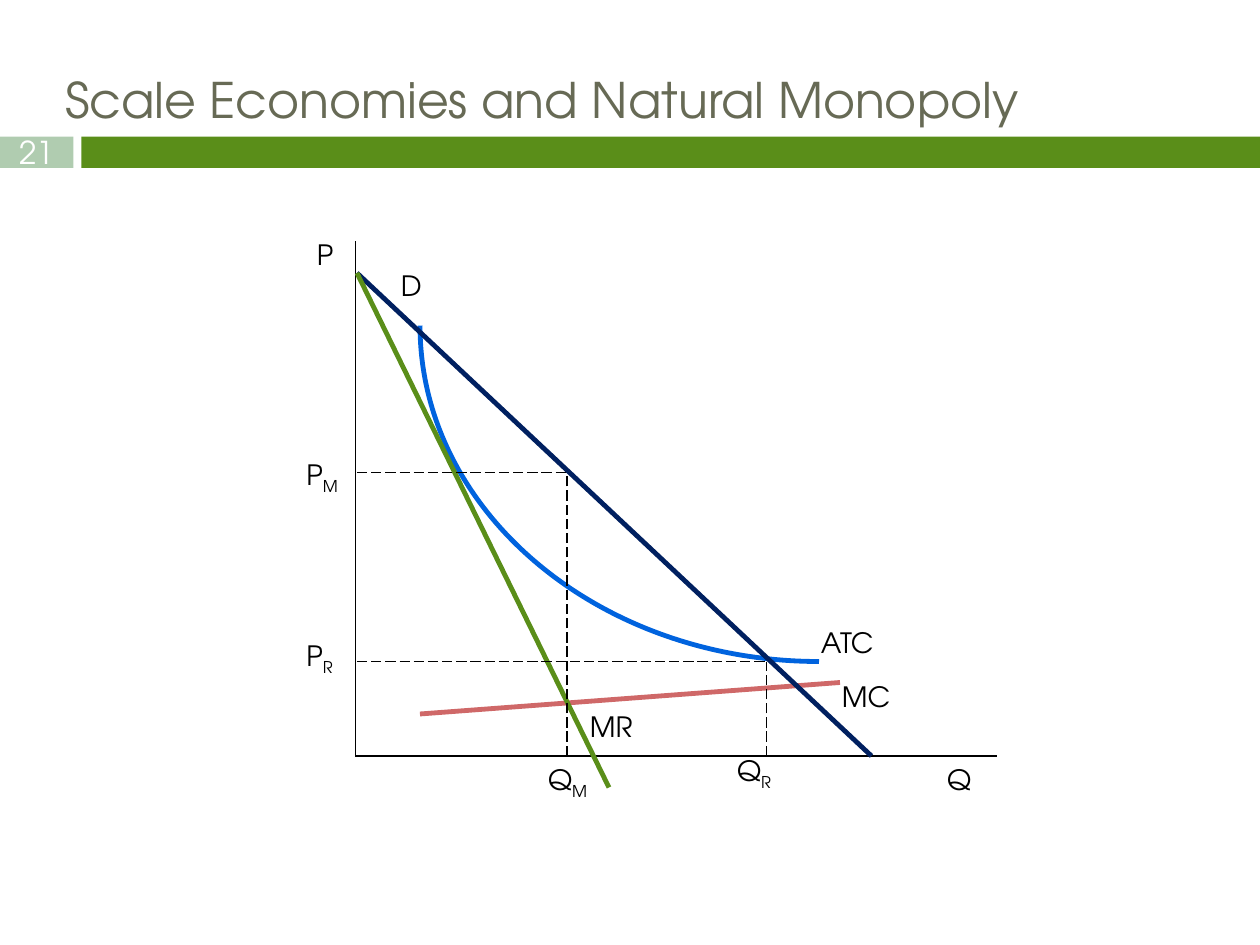
from lxml.etree import SubElement
from pptx import Presentation
from pptx.dml.color import RGBColor
from pptx.enum.dml import MSO_LINE_DASH_STYLE as DASH
from pptx.enum.shapes import MSO_CONNECTOR, MSO_SHAPE
from pptx.enum.text import MSO_ANCHOR, MSO_AUTO_SIZE, PP_ALIGN
from pptx.oxml.ns import qn
from pptx.util import Pt

FONT = "TeX Gyre Adventor"
COLORS = {
    "title": "676A55", "bar": "5A8E19", "number": "B0CCB0", "white": "FFFFFF",
    "black": "000000", "demand": "002060", "mr": "5A8E19", "mc": "CF6868",
    "atc": "0063DE",
}
THIN, THICK = 0.75, 2.75

# Positions of the diagram, in points
AXIS_X, AXIS_Y = 203, 432
LEFT = 204
INTERCEPT = (LEFT, 156)
MONOPOLY = (324, 270)
REGULATED = (438, 378)

# Letter, subscript, left, top
LABELS = [
    ("P", "", 174, 132), ("MC", "", 474, 385), ("ATC", "", 462, 354),
    ("D", "", 222, 150), ("MR", "", 330, 402), ("P", "M", 168, 258),
    ("P", "R", 168, 361.5), ("Q", "R", 414, 427), ("Q", "M", 306, 432),
    ("Q", "", 534, 432),
]


def rgb(name):
    return RGBColor.from_string(COLORS[name])


def add_run(p, text, size, color):
    r = p.add_run()
    r.text = text
    r.font.name = FONT
    r.font.size = Pt(size)
    r.font.color.rgb = rgb(color)
    return r


def set_title(s, text):
    sp = s.shapes.title
    sp.left, sp.top, sp.width, sp.height = Pt(30), Pt(36), Pt(648), Pt(29)
    tf = sp.text_frame
    tf.auto_size = MSO_AUTO_SIZE.NONE
    tf.vertical_anchor = MSO_ANCHOR.TOP
    p = tf.paragraphs[0]
    p.alignment = PP_ALIGN.LEFT
    add_run(p, text, 28, "title")


def add_bar(s, left, width, color):
    sp = s.shapes.add_shape(MSO_SHAPE.RECTANGLE, Pt(left), Pt(78), Pt(width), Pt(18))
    sp.shadow.inherit = False
    sp.fill.solid()
    sp.fill.fore_color.rgb = rgb(color)
    sp.line.fill.background()
    return sp


def add_line(s, start, end, color="black", width=THIN, dash=None):
    line = s.shapes.add_connector(
        MSO_CONNECTOR.STRAIGHT, *(Pt(v) for v in (*start, *end)))
    line.line.color.rgb = rgb(color)
    line.line.width = Pt(width)
    if dash:
        line.line.dash_style = dash
    SubElement(line._element.spPr, qn("a:effectLst"))


def add_curve(s, start, *points, color):
    """Draw one cubic Bézier from start through two control points to an end."""
    builder = s.shapes.build_freeform(Pt(start[0]), Pt(start[1]))
    builder.add_line_segments([(Pt(x), Pt(y)) for x, y in points], close=False)
    sp = builder.convert_to_shape()
    sp.shadow.inherit = False
    sp.fill.background()
    sp.line.color.rgb = rgb(color)
    sp.line.width = Pt(THICK)
    # Turn the three straight segments into one curve
    outline = next(sp._element.iter(qn("a:path")))
    bezier = SubElement(outline, qn("a:cubicBezTo"))
    for segment in outline.findall(qn("a:lnTo")):
        bezier.append(segment[0])
        outline.remove(segment)


def add_label(s, letter, subscript, left, top):
    tf = s.shapes.add_textbox(Pt(left), Pt(top), Pt(60), Pt(26.6)).text_frame
    tf.word_wrap = True
    p = tf.paragraphs[0]
    add_run(p, letter, 16, "black")
    if subscript:
        r = add_run(p, subscript, 16, "black")
        r.font._element.set("baseline", "-25000")


def add_guides(s, point):
    x, y = point
    add_line(s, (x, AXIS_Y), point, dash=DASH.LONG_DASH)
    add_line(s, (LEFT, y), point, dash=DASH.LONG_DASH)


def main():
    prs = Presentation()
    prs.slide_width, prs.slide_height = Pt(720), Pt(540)
    s = prs.slides.add_slide(prs.slide_layouts[5])

    # Header
    add_bar(s, 46.5, 673.5, "bar")
    tf = add_bar(s, 0, 42, "number").text_frame
    tf.vertical_anchor = MSO_ANCHOR.MIDDLE
    tf.paragraphs[0].alignment = PP_ALIGN.CENTER
    add_run(tf.paragraphs[0], "21", 18, "white")
    set_title(s, "Scale Economies and Natural Monopoly")

    # Axes
    add_line(s, (AXIS_X, 138), (AXIS_X, AXIS_Y))
    add_line(s, (AXIS_X, AXIS_Y), (570, AXIS_Y))

    # Cost and revenue curves
    add_curve(s, (468, 378), (342, 378), (240, 292), (240, 186), color="atc")
    add_line(s, (240, 408), (480, 390), "mc", THICK)
    add_line(s, INTERCEPT, (498, AXIS_Y), "demand", THICK)
    add_line(s, INTERCEPT, (348, 450), "mr", THICK)

    # Monopoly and regulated outcomes
    for point in (REGULATED, MONOPOLY):
        add_guides(s, point)

    for label in LABELS:
        add_label(s, *label)

    prs.save("out.pptx")


if __name__ == "__main__":
    main()
